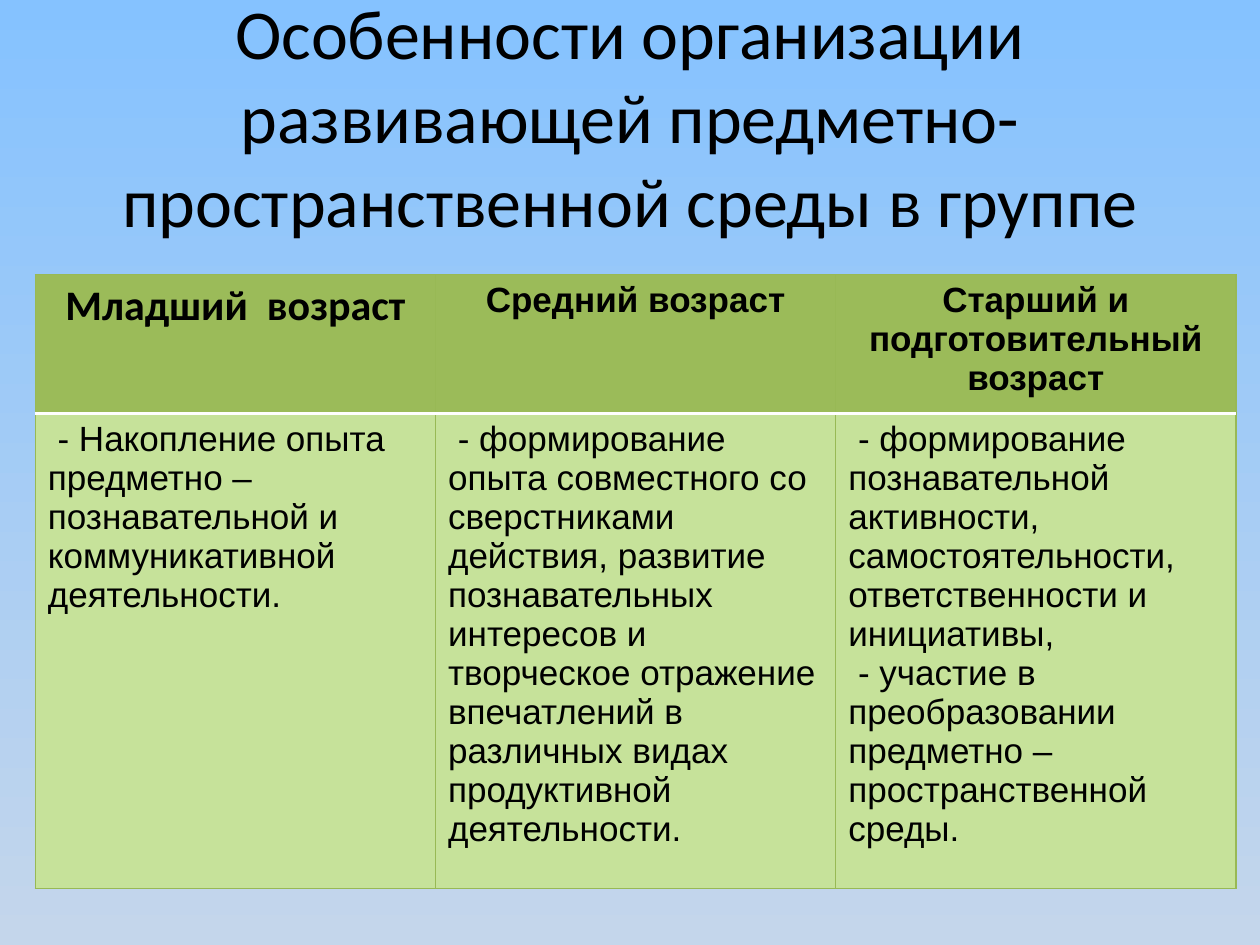
from dataclasses import dataclass

from lxml import etree
from pptx import Presentation
from pptx import util as u
from pptx.dml.color import RGBColor
from pptx.enum import text
from pptx.oxml.ns import qn

SKY = RGBColor(0x85, 0xC2, 0xFF)
HAZE = RGBColor(0xC4, 0xD6, 0xEB)
GREEN = RGBColor(0x9B, 0xBB, 0x59)
LIGHT = RGBColor(0xC6, 0xE2, 0x9A)
EDGE = RGBColor(0x98, 0xB9, 0x55)
WHITE = RGBColor(0xFF, 0xFF, 0xFF)
BLACK = RGBColor(0, 0, 0)

WIDE, HIGH = u.Inches(10), u.Inches(7.5)
MID, LEFT = text.PP_ALIGN.CENTER, text.PP_ALIGN.LEFT


@dataclass
class Age:
    name: str
    goals: list[str]
    font: str = "Arial"
    size: int = 20


AGES = [
    Age("Младший  возраст",
        [" - Накопление опыта предметно – познавательной и коммуникативной "
         "деятельности."], "Calibri", 24),
    Age("Средний возраст",
        [" - формирование опыта совместного со сверстниками действия, развитие "
         "познавательных интересов и творческое отражение впечатлений в "
         "различных видах продуктивной деятельности."]),
    Age("Старший и подготовительный возраст",
        [" - формирование познавательной активности, самостоятельности, "
         "ответственности и инициативы,",
         " - участие в преобразовании предметно – пространственной среды."]),
]


def write(frame, lines: list[str], *, font: str = "Arial", size: int = 20,
          bold: bool = False, align=LEFT) -> None:
    """Put one paragraph per line into a text frame."""
    frame.word_wrap = True
    for i, line in enumerate(lines):
        para = frame.add_paragraph() if i else frame.paragraphs[0]
        para.alignment = align
        run = para.add_run()
        run.text = line
        run.font.name, run.font.size = font, u.Pt(size)
        run.font.bold, run.font.color.rgb = bold, BLACK


def edge(cell, side: str, color: RGBColor, width: float) -> None:
    """Draw one side of a cell; call in the order L, R, T, B, before the fill."""
    line = etree.SubElement(cell._tc.get_or_add_tcPr(), qn(f"a:ln{side}"),
                            w=str(u.Pt(width)))
    fill = etree.SubElement(line, qn("a:solidFill"))
    etree.SubElement(fill, qn("a:srgbClr"), val=str(color))


def paint(cell, color: RGBColor, top=(EDGE, 0.75), base=(EDGE, 0.75)) -> None:
    sides = {"L": (EDGE, 0.75), "R": (EDGE, 0.75), "T": top, "B": base}
    for side, look in sides.items():
        edge(cell, side, *look)
    cell.fill.solid()
    cell.fill.fore_color.rgb = color


def main() -> None:
    deck = Presentation()
    deck.slide_width, deck.slide_height = WIDE, HIGH
    slide = deck.slides.add_slide(deck.slide_layouts[6])

    # Sky background, from top to bottom
    back = slide.background.fill
    back.gradient()
    back.gradient_angle = 270
    for stop, color in zip(back.gradient_stops, (SKY, HAZE)):
        stop.color.rgb = color

    # Title
    box = slide.shapes.add_textbox(int(WIDE * 0.05), u.Inches(0.21),
                                   int(WIDE * 0.9), u.Inches(1.42))
    box.text_frame.vertical_anchor = text.MSO_ANCHOR.MIDDLE
    write(box.text_frame, ["Особенности организации развивающей предметно-"
                           "пространственной среды в группе"],
          font="Calibri", size=40, align=MID)

    # Table: one column per age group
    rows = [u.Inches(1.02), u.Inches(3.51)]
    grid = slide.shapes.add_table(2, len(AGES), u.Inches(0.28), u.Inches(2.18),
                                  u.Inches(9.53), sum(rows)).table
    grid.horz_banding = False
    for row, tall in zip(grid.rows, rows):
        row.height = tall
    rule = (WHITE, 2)
    for col, age in enumerate(AGES):
        head, body = grid.cell(0, col), grid.cell(1, col)
        write(head.text_frame, [age.name], font=age.font, size=age.size,
              bold=True, align=MID)
        paint(head, GREEN, base=rule)
        write(body.text_frame, age.goals)
        paint(body, LIGHT, top=rule)

    deck.save("out.pptx")


if __name__ == "__main__":
    main()
